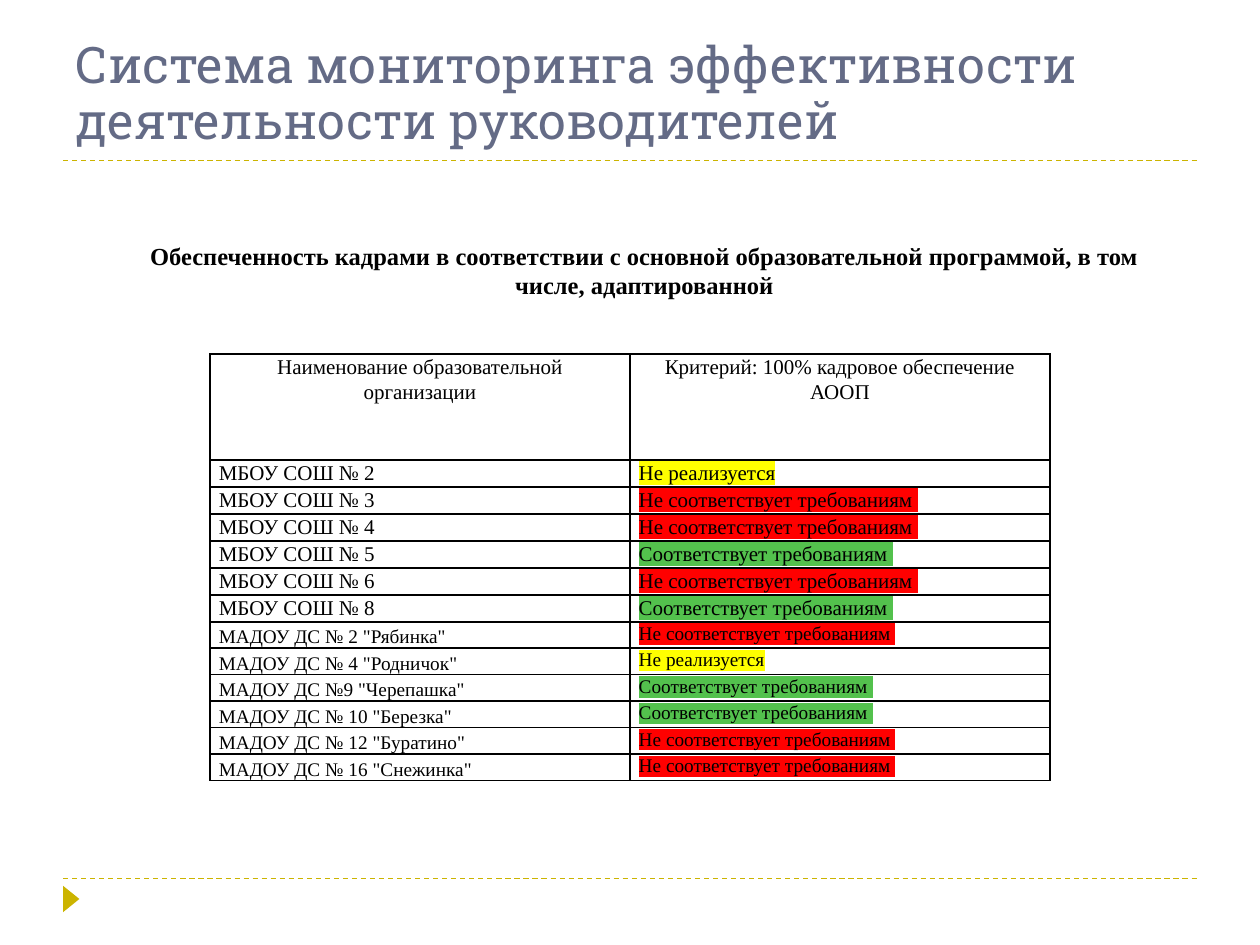
from dataclasses import dataclass
from enum import Enum

from lxml.etree import SubElement
from pptx import Presentation
from pptx.dml.color import RGBColor
from pptx.enum.dml import MSO_LINE
from pptx.enum.shapes import MSO_CONNECTOR, MSO_SHAPE
from pptx.enum.text import MSO_ANCHOR, MSO_AUTO_SIZE, PP_ALIGN
from pptx.oxml.ns import qn
from pptx.util import Inches, Pt

SLIDE_W, SLIDE_H = Inches(10), Inches(7.5)
MARGIN = 0.05  # share of the slide's width
GOLD, SLATE, BLACK = "CCB400", "646B86", "000000"
SERIF, SLAB = "Times New Roman", "Roboto Slab"
HEADER_H, ROW_H = Inches(0.84), Inches(0.21)


class Status(Enum):
    """Wording and highlight colour of a result."""
    NOT_OFFERED = ("Не реализуется", "FFFF00")
    FAILS = ("Не соответствует требованиям ", "FF0000")
    MEETS = ("Соответствует требованиям ", "53C14D")


@dataclass(frozen=True)
class Institution:
    name: str
    status: Status
    size: float = 12
    anchor: MSO_ANCHOR = MSO_ANCHOR.TOP


def school(number: int, status: Status) -> Institution:
    return Institution(f"МБОУ СОШ № {number}", status)


def kindergarten(label: str, status: Status) -> Institution:
    return Institution(f"МАДОУ ДС {label}", status, 11, MSO_ANCHOR.BOTTOM)


HEADINGS = ("Наименование образовательной организации",
            "Критерий: 100% кадровое обеспечение АООП")
INSTITUTIONS = (
    school(2, Status.NOT_OFFERED),
    school(3, Status.FAILS),
    school(4, Status.FAILS),
    school(5, Status.MEETS),
    school(6, Status.FAILS),
    school(8, Status.MEETS),
    kindergarten('№ 2 "Рябинка"', Status.FAILS),
    kindergarten('№ 4 "Родничок"', Status.NOT_OFFERED),
    kindergarten('№9 "Черепашка"', Status.MEETS),
    kindergarten('№ 10 "Березка"', Status.MEETS),
    kindergarten('№ 12 "Буратино"', Status.FAILS),
    kindergarten('№ 16 "Снежинка"', Status.FAILS),
)


def rgb(value: str) -> RGBColor:
    return RGBColor.from_string(value)


def write(frame, text: str, size: float, font: str = SERIF, color: str = BLACK,
          align: PP_ALIGN = PP_ALIGN.LEFT, bold: bool = False,
          spacing: float | None = None):
    """Fill a text frame with one formatted run and return the run."""
    frame.text = text
    frame.word_wrap = True
    paragraph = frame.paragraphs[0]
    paragraph.alignment = align
    if spacing:
        paragraph.line_spacing = spacing
    run = paragraph.runs[0]
    run.font.size, run.font.name, run.font.bold = Pt(size), font, bold
    run.font.color.rgb = rgb(color)
    return run


def highlight(run, color: str) -> None:
    properties = run.font._element
    mark = SubElement(properties, qn("a:highlight"))
    SubElement(mark, qn("a:srgbClr"), val=color)
    properties.find(qn("a:solidFill")).addnext(mark)


def border(cell, color: str = BLACK, width: float = 1) -> None:
    properties = cell._tc.get_or_add_tcPr()
    for index, side in enumerate(("lnL", "lnR", "lnT", "lnB")):
        edge = SubElement(properties, qn(f"a:{side}"), w=str(Pt(width)))
        fill = SubElement(edge, qn("a:solidFill"))
        SubElement(fill, qn("a:srgbClr"), val=color)
        properties.insert(index, edge)


def fill_cell(cell, text: str, size: float = 12, align: PP_ALIGN = PP_ALIGN.LEFT,
              anchor: MSO_ANCHOR = MSO_ANCHOR.TOP):
    cell.margin_left = cell.margin_right = Inches(0.07)
    cell.margin_top = cell.margin_bottom = 0
    cell.vertical_anchor = anchor
    cell.fill.background()
    border(cell)
    return write(cell.text_frame, text, size, align=align, spacing=1.07)


def add_rule(slide, height_share: float) -> None:
    """Draw a dashed line between the margins."""
    y = int(SLIDE_H * height_share)
    rule = slide.shapes.add_connector(
        MSO_CONNECTOR.STRAIGHT, int(SLIDE_W * MARGIN), y, int(SLIDE_W * (1 - MARGIN)), y)
    rule.line.color.rgb = rgb(GOLD)
    rule.line.width = Pt(0.75)
    rule.line.dash_style = MSO_LINE.DASH
    SubElement(rule._element.spPr, qn("a:effectLst"))


def add_page_marker(slide) -> None:
    marker = slide.shapes.add_shape(
        MSO_SHAPE.ISOSCELES_TRIANGLE, Inches(0.46), Inches(7.07), Inches(0.21), Inches(0.13))
    marker.rotation = 90
    marker.shadow.inherit = False
    marker.fill.solid()
    marker.fill.fore_color.rgb = rgb(GOLD)
    marker.line.fill.background()


def add_title(slide) -> None:
    title = slide.shapes.title
    title.left, title.top = int(SLIDE_W * MARGIN), Inches(0.25)
    title.width, title.height = int(SLIDE_W * (1 - 2 * MARGIN)), Inches(1)
    frame = title.text_frame
    write(frame, "Система мониторинга эффективности деятельности руководителей",
          28.8, SLAB, SLATE, spacing=0.93)
    frame.auto_size = MSO_AUTO_SIZE.NONE
    frame.vertical_anchor = MSO_ANCHOR.BOTTOM


def add_subtitle(slide) -> None:
    subtitle = slide.shapes.add_textbox(
        Inches(0.98), Inches(1.86), Inches(8.27), Inches(0.57))
    write(subtitle.text_frame,
          "Обеспеченность кадрами в соответствии с основной образовательной "
          "программой, в том числе, адаптированной",
          14, align=PP_ALIGN.CENTER, bold=True)
    subtitle.text_frame.vertical_anchor = MSO_ANCHOR.MIDDLE


def add_results(slide) -> None:
    width = SLIDE_W * 2 // 3
    count = len(INSTITUTIONS)
    table = slide.shapes.add_table(
        count + 1, len(HEADINGS), (SLIDE_W - width) // 2, Inches(2.81),
        width, HEADER_H + count * ROW_H).table
    table.first_row = table.horz_banding = False
    table.rows[0].height = HEADER_H
    for column, heading in enumerate(HEADINGS):
        fill_cell(table.cell(0, column), heading, align=PP_ALIGN.CENTER)
    for row, item in enumerate(INSTITUTIONS, start=1):
        table.rows[row].height = ROW_H
        fill_cell(table.cell(row, 0), item.name, item.size, anchor=item.anchor)
        wording, color = item.status.value
        highlight(fill_cell(table.cell(row, 1), wording, item.size), color)


def main() -> None:
    deck = Presentation()
    deck.slide_width, deck.slide_height = SLIDE_W, SLIDE_H
    slide = deck.slides.add_slide(deck.slide_layouts[5])
    for height_share in (0.93, 0.17):
        add_rule(slide, height_share)
    add_page_marker(slide)
    add_title(slide)
    add_subtitle(slide)
    add_results(slide)
    deck.save("out.pptx")


if __name__ == "__main__":
    main()
